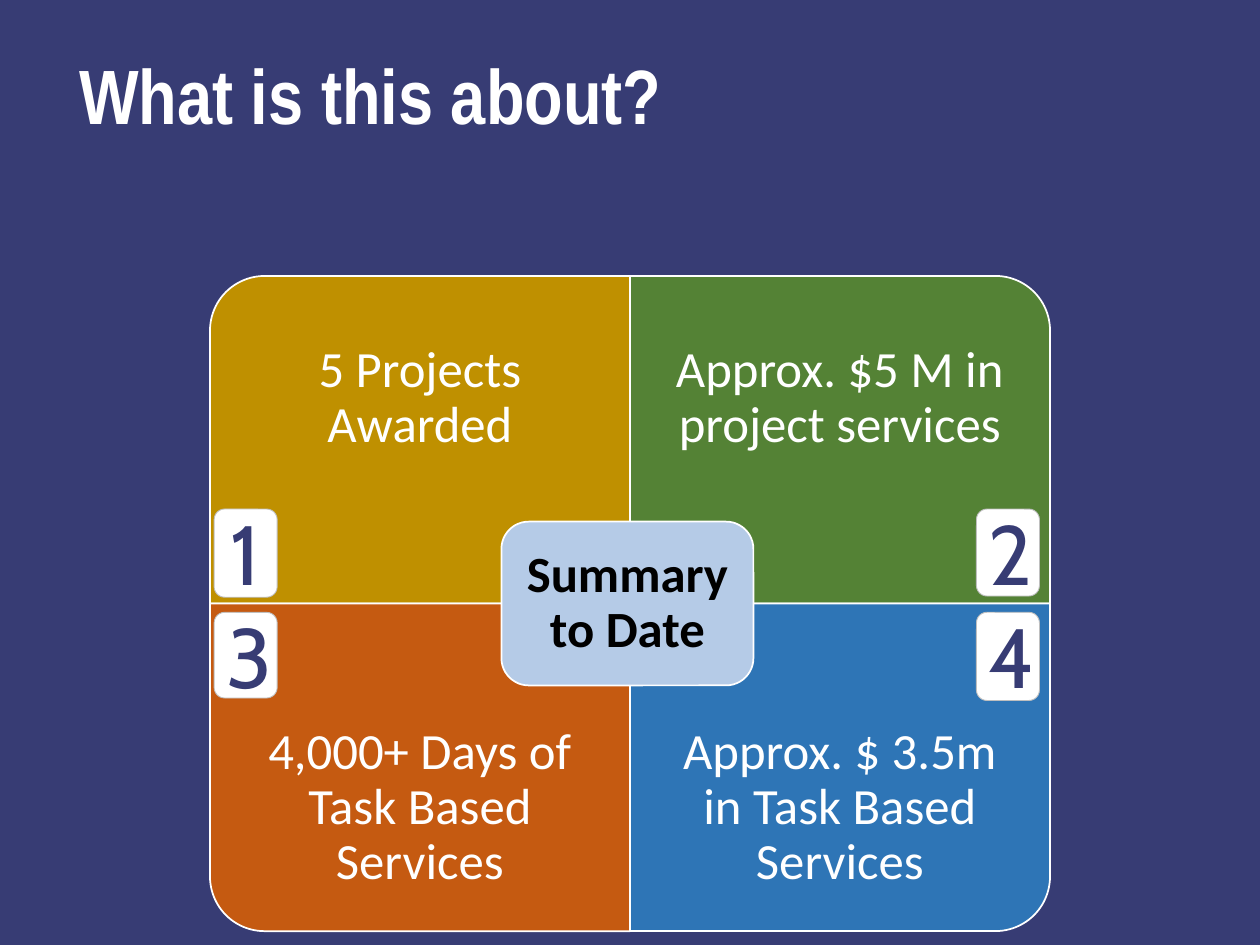
"""Build a slide with four numbered quarters around a summary box."""
import dataclasses
import typing

import pptx
import pptx.dml.color
import pptx.enum.shapes
import pptx.enum.text
import pptx.util

RGB = pptx.dml.color.RGBColor
KIND = pptx.enum.shapes.MSO_SHAPE
ALIGN = pptx.enum.text.PP_ALIGN
MIDDLE = pptx.enum.text.MSO_ANCHOR.MIDDLE
TOP = pptx.enum.text.MSO_ANCHOR.TOP

NAVY = RGB(0x37, 0x3C, 0x74)
WHITE = RGB(0xFF, 0xFF, 0xFF)
BLACK = RGB(0, 0, 0)
GOLD = RGB(0xBF, 0x90, 0x00)
GREEN = RGB(0x54, 0x82, 0x35)
RUST = RGB(0xC5, 0x5A, 0x11)
BLUE = RGB(0x2E, 0x75, 0xB6)
PALE = RGB(0xB5, 0xCB, 0xE7)
GREY = RGB(0xBF, 0xBF, 0xBF)

WIDE, HIGH = 10, 7.5
LEFT, COL = WIDE / 6, WIDE / 3
UPPER, ROW = 2.19, 2.6


@dataclasses.dataclass(frozen=True)
class Box:
    """A frame in inches."""
    left: float
    top: float
    width: float
    height: float

    def turned(self) -> "Box":
        """Swap width and height about the centre."""
        shift = (self.width - self.height) / 2
        return Box(self.left + shift, self.top - shift, self.height, self.width)

    def inner(self, gap: float) -> "Box":
        """Shrink the frame by a gap on each side."""
        return Box(self.left + gap, self.top + gap,
                   self.width - 2 * gap, self.height - 2 * gap)

    def sizes(self) -> list[int]:
        """Give the frame as slide lengths."""
        return [pptx.util.Inches(n) for n in dataclasses.astuple(self)]


class Quarter(typing.NamedTuple):
    """One quarter of the grid and its number plate."""
    text: str
    col: int
    row: int
    turn: int
    fill: RGB
    plate: float


QUARTERS = (
    Quarter("5 Projects Awarded", 0, 0, 270, GOLD, 0.7),
    Quarter("Approx. $5 M in project services", 1, 0, 0, GREEN, 0.69),
    Quarter("4,000+ Days of Task Based Services", 0, 1, 180, RUST, 0.68),
    Quarter("Approx. $ 3.5m in Task Based Services", 1, 1, 90, BLUE, 0.7),
)


def write(frame, text: str, *, size: float, font: str, color: RGB,
          bold: bool = False, align=ALIGN.CENTER, anchor=MIDDLE,
          inset: float | None = None, space: float = 0.9) -> None:
    """Put formatted text in a text frame."""
    frame.word_wrap = True
    frame.vertical_anchor = anchor
    if inset is not None:
        frame.margin_left = frame.margin_right = pptx.util.Inches(inset)
        frame.margin_top = frame.margin_bottom = pptx.util.Inches(inset)
    line = frame.paragraphs[0]
    line.alignment, line.line_spacing = align, space
    run = line.add_run()
    run.text = text
    run.font.name, run.font.size = font, pptx.util.Pt(size)
    run.font.bold, run.font.color.rgb = bold, color


def draw(slide, kind, box: Box, fill: RGB, edge: RGB = WHITE,
         weight: float = 1, turn: int = 0) -> None:
    """Add a filled and outlined shape."""
    shape = slide.shapes.add_shape(kind, *box.sizes())
    shape.shadow.inherit = False
    shape.rotation = turn
    shape.fill.solid()
    shape.fill.fore_color.rgb = fill
    shape.line.color.rgb = edge
    shape.line.width = pptx.util.Pt(weight)


def label(slide, box: Box, text: str, **style) -> None:
    """Add a text box."""
    write(slide.shapes.add_textbox(*box.sizes()).text_frame, text, **style)


def panel(slide, part: Quarter) -> None:
    """Draw a quarter with its text on the outer three fourths."""
    box = Box(LEFT + part.col * COL, UPPER + part.row * ROW, COL, ROW)
    frame = box.turned() if part.turn % 180 else box
    draw(slide, KIND.ROUND_1_RECTANGLE, frame, part.fill, turn=part.turn)
    area = dataclasses.replace(box, top=box.top + part.row * ROW / 4,
                               height=ROW * 3 / 4)
    label(slide, area, part.text, size=29, font="Calibri", color=WHITE, inset=0.23)


def badge(slide, part: Quarter, digit: int) -> None:
    """Draw a number plate at the side of a quarter."""
    plate = Box(1.7 + part.col * 6.05, 4.04 + part.row * 0.82, 0.5, part.plate)
    draw(slide, KIND.ROUNDED_RECTANGLE, plate, WHITE, GREY, 0.5)
    area = dataclasses.replace(plate, top=plate.top - 0.11, height=0.91)
    label(slide, area, str(digit), size=48, font="Cabin", color=NAVY,
          anchor=TOP, space=1.0)


def main() -> None:
    """Build and save the slide."""
    deck = pptx.Presentation()
    deck.slide_width = pptx.util.Inches(WIDE)
    deck.slide_height = pptx.util.Inches(HIGH)
    slide = deck.slides.add_slide(deck.slide_layouts[5])
    slide.background.fill.solid()
    slide.background.fill.fore_color.rgb = NAVY

    title = slide.shapes.title
    title.left, title.top, title.width, title.height = Box(0.53, 0.28, 8.62, 1.02).sizes()
    write(title.text_frame, "What is this about?", size=44, font="Arial Narrow",
          color=WHITE, bold=True, align=ALIGN.LEFT)

    for part in QUARTERS:
        panel(slide, part)

    hub = Box(3.98, UPPER + ROW * 3 / 4, COL * 0.6, ROW / 2)
    draw(slide, KIND.ROUNDED_RECTANGLE, hub, PALE)
    label(slide, hub.inner(0.06), "Summary to Date", size=29, font="Calibri",
          color=BLACK, bold=True, inset=0.12)

    for digit, part in enumerate(QUARTERS, 1):
        badge(slide, part, digit)
    deck.save("out.pptx")


if __name__ == "__main__":
    main()
